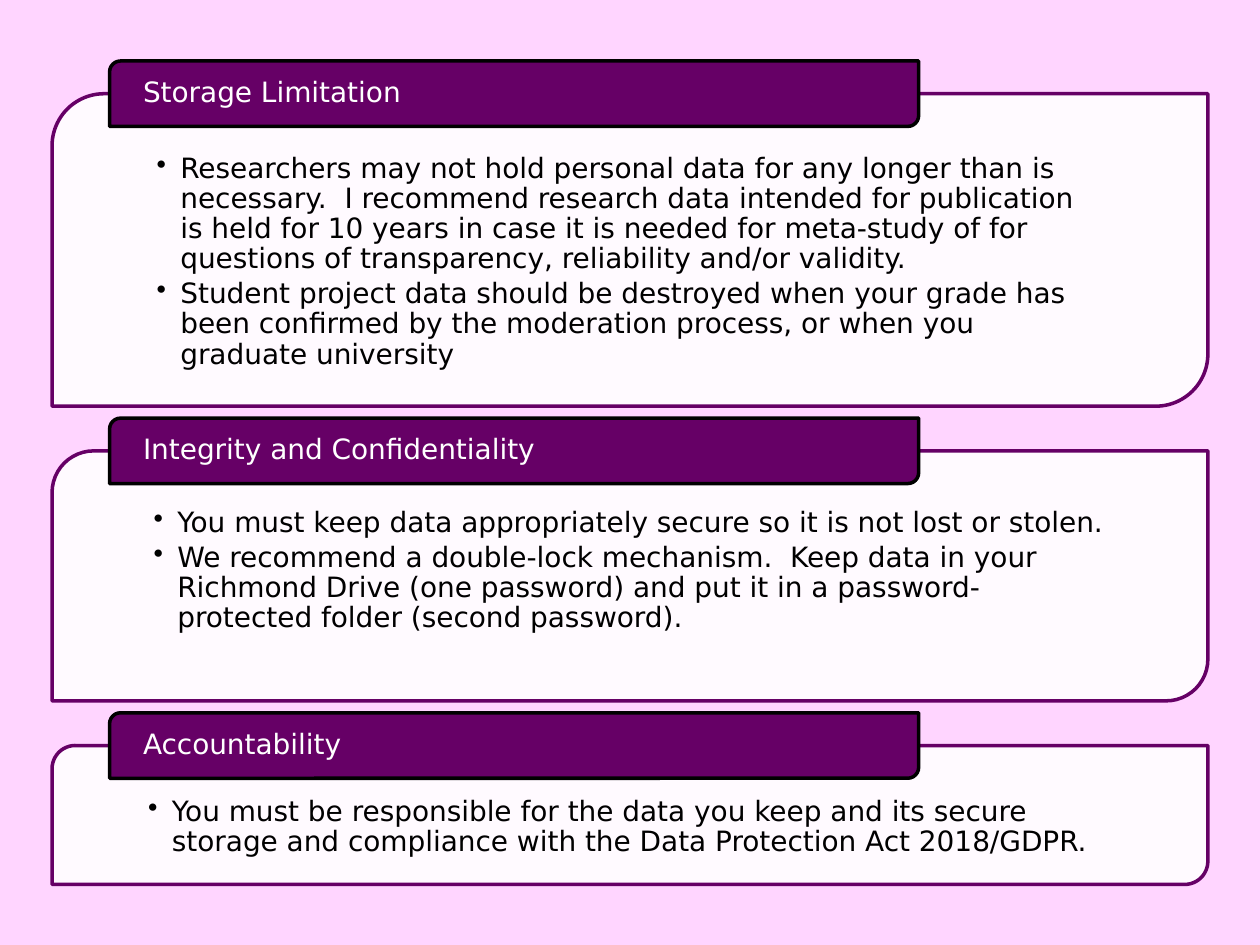
from lxml.etree import SubElement
from pptx import Presentation
from pptx.dml.color import RGBColor
from pptx.enum.shapes import MSO_SHAPE
from pptx.enum.text import MSO_ANCHOR as ANCHOR, PP_ALIGN as ALIGN
from pptx.oxml.ns import qn
from pptx.util import Cm, Pt

PURPLE, BLACK, WHITE, PINK = "660066", "000000", "FFFFFF", "FFD5FF"
TAB_H, GAP, TOP = 1.32, 0.24, 1.23

# Heading, panel height in cm, bullet points
SECTIONS = [
    ("Storage Limitation", 6.3, [
        "Researchers may not hold personal data for any longer than is necessary.  "
        "I recommend research data intended for publication is held for 10 years in case "
        "it is needed for meta-study of for questions of transparency, reliability "
        "and/or validity.",
        "Student project data should be destroyed when your grade has been confirmed by "
        "the moderation process, or when you graduate university"]),
    ("Integrity and Confidentiality", 5.04, [
        "You must keep data appropriately secure so it is not lost or stolen.",
        "We recommend a double-lock mechanism.  Keep data in your Richmond Drive (one "
        "password) and put it in a password-protected folder (second password)."]),
    ("Accountability", 2.8, [
        "You must be responsible for the data you keep and its secure storage and "
        "compliance with the Data Protection Act 2018/GDPR."]),
]


def rgb(value):
    return RGBColor.from_string(value)


class Deck:
    font, size = "DejaVu Sans", Pt(16)

    def __init__(self, prs):
        self.s = prs.slides.add_slide(prs.slide_layouts[6])
        fill = self.s.background.fill
        fill.solid()
        fill.fore_color.rgb = rgb(PINK)

    def box(self, x, y, w, h, fill, line):
        """Add a rectangle with two opposite corners rounded."""
        sp = self.s.shapes.add_shape(MSO_SHAPE.ROUND_2_DIAG_RECTANGLE,
                                     Cm(x), Cm(y), Cm(w), Cm(h))
        sp.shadow.inherit = False
        sp.fill.solid()
        sp.fill.fore_color.rgb = rgb(fill)
        sp.line.color.rgb = rgb(line)
        sp.line.width = Pt(2)
        return sp

    def set_text(self, sp, lines, color, anchor, insets):
        """Fill the shape and return its paragraphs; insets are side, top, bottom."""
        tf = sp.text_frame
        tf.word_wrap = True
        tf.vertical_anchor = anchor
        tf.margin_left = tf.margin_right = Cm(insets[0])
        tf.margin_top, tf.margin_bottom = Cm(insets[1]), Cm(insets[2])
        tf.text = "\n".join(lines)
        for p in tf.paragraphs:
            p.alignment = ALIGN.LEFT
            p.line_spacing = 0.9
            for r in p.runs:
                r.font.name, r.font.size = self.font, self.size
                r.font.color.rgb = rgb(color)
        return tf.paragraphs

    def tab(self, y, heading):
        sp = self.box(2.21, y, 16.31, TAB_H, PURPLE, BLACK)
        self.set_text(sp, [heading], WHITE, ANCHOR.MIDDLE, (0.61, 0, 0))

    def panel(self, y, h, points):
        sp = self.box(1.05, y, 23.3, h, WHITE, PURPLE)
        color = sp._element.spPr.find(qn("a:solidFill"))[0]
        SubElement(color, qn("a:alpha"), val="90000")
        for p in self.set_text(sp, points, BLACK, ANCHOR.TOP, (1.8, 0.91, 0.3)):
            p.level = 1
            p.space_after = Pt(2.7)
            pPr = p._p.get_or_add_pPr()
            pPr.set("marL", str(Cm(0.48)))
            pPr.set("indent", str(-Cm(0.48)))
            SubElement(pPr, qn("a:buChar"), char="•")


def main():
    prs = Presentation()
    prs.slide_width, prs.slide_height = Cm(25.4), Cm(19.05)
    deck = Deck(prs)
    y = TOP
    for heading, h, points in SECTIONS:
        deck.panel(y + TAB_H / 2, h, points)
        deck.tab(y, heading)
        y += TAB_H / 2 + h + GAP
    prs.save("out.pptx")


if __name__ == "__main__":
    main()
